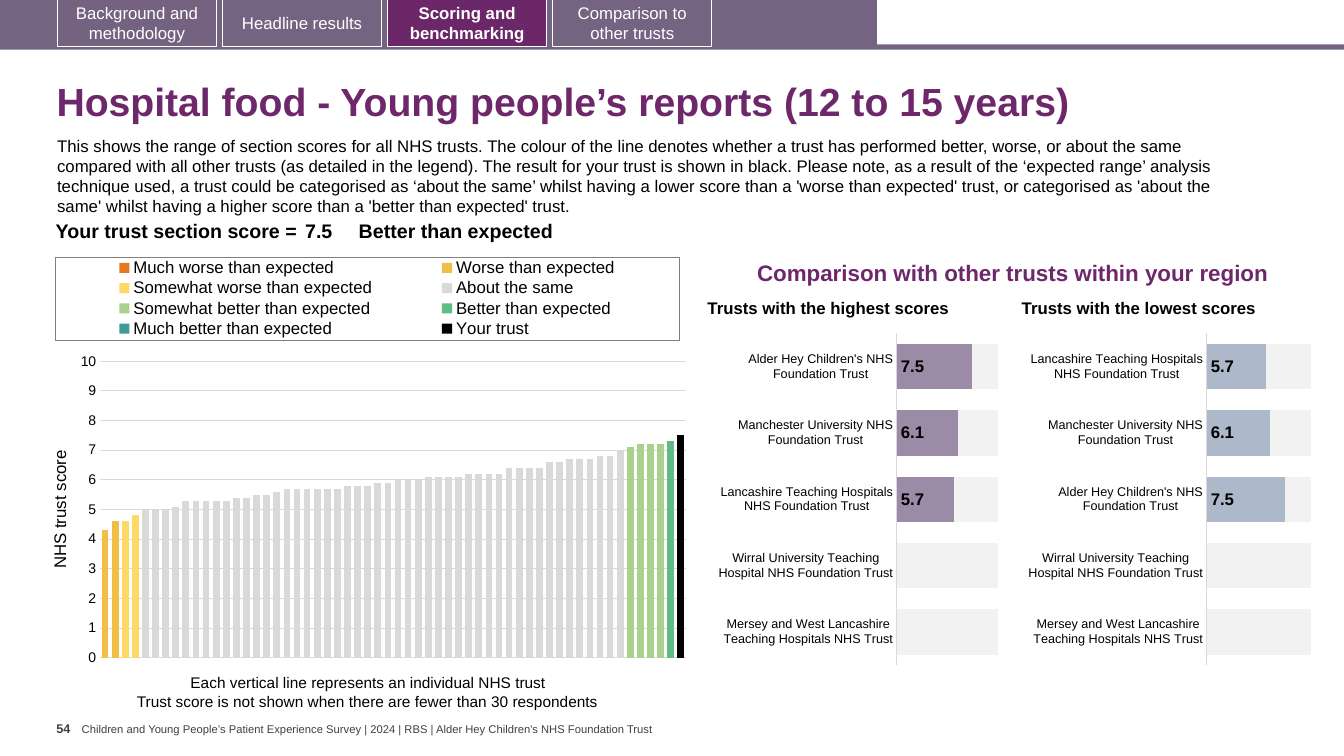
import copy
from dataclasses import dataclass

import pptx
import pptx.chart.data
import pptx.dml.color
import pptx.enum.chart
import pptx.enum.shapes
import pptx.enum.text
import pptx.oxml
import pptx.util

Cm, Pt = pptx.util.Cm, pptx.util.Pt
ALIGN, ANCHOR = pptx.enum.text.PP_ALIGN, pptx.enum.text.MSO_ANCHOR
XL = pptx.enum.chart


@dataclass(frozen=True)
class Theme:
    font: str = "Arial"
    black: str = "000000"
    white: str = "FFFFFF"
    grey: str = "404040"
    grid: str = "D9D9D9"
    frame: str = "7F7F7F"
    rest: str = "F2F2F2"
    band: str = "756382"
    tab: str = "746280"
    active: str = "6B2768"
    heading: str = "6D276A"
    highest: str = "9C8BA7"
    lowest: str = "ADB9CA"
    title: float = 28
    subtitle: float = 16
    score: float = 14
    body: float = 12
    note: float = 11
    axis: float = 10
    small: float = 9
    footer: float = 8


T = Theme()

# Section name, colour, position of its first trust, scores from there on
BANDS = [
    ("Much worse than expected", "E87722", 0, []),
    ("Worse than expected", "F1BE48", 0, [4.3, 4.6]),
    ("Somewhat worse than expected", "FFD966", 2, [4.6, 4.8]),
    ("About the same", "D9D9D9", 4,
     [5, 5, 5, 5.1] + [5.3] * 5 + [5.4, 5.4, 5.5, 5.5, 5.6] + [5.7] * 6 + [5.8] * 3
     + [5.9, 5.9, 6, 6, 6] + [6.1] * 4 + [6.2] * 4 + [6.4] * 4
     + [6.6, 6.6, 6.7, 6.7, 6.7, 6.8, 6.8, 7]),
    ("Somewhat better than expected", "A9D18E", 52, [7.1, 7.2, 7.2, 7.2]),
    ("Better than expected", "5FBD83", 56, [7.3, 7.5]),
    ("Much better than expected", "419999", 0, []),
    ("Your trust", "000000", 57, [7.5]),
]
TRUST_COUNT = 58
SCORED = [("Alder Hey Children's NHS Foundation Trust", 7.5),
          ("Manchester University NHS Foundation Trust", 6.1),
          ("Lancashire Teaching Hospitals NHS Foundation Trust", 5.7)]
UNSCORED = [("Wirral University Teaching Hospital NHS Foundation Trust", None),
            ("Mersey and West Lancashire Teaching Hospitals NHS Trust", None)]


def rgb(color):
    return pptx.dml.color.RGBColor.from_string(color)


def style(font, size, color=T.black, bold=False):
    font.name, font.size, font.bold = T.font, Pt(size), bold
    font.color.rgb = rgb(color)


def write(tf, text, size=T.body, color=T.black, bold=False, align=ALIGN.LEFT,
          anchor=ANCHOR.TOP, spacing=None, inset=None, wrap=True):
    tf.word_wrap, tf.vertical_anchor = wrap, anchor
    if inset is not None:
        tf.margin_left = tf.margin_right = tf.margin_top = tf.margin_bottom = Cm(inset)
    p = tf.paragraphs[0]
    p.alignment, p.line_spacing = align, spacing
    r = p.add_run()
    r.text = text
    style(r.font, size, color, bold)


def add_text(s, x, y, w, h, text, **fmt):
    write(s.shapes.add_textbox(Cm(x), Cm(y), Cm(w), Cm(h)).text_frame, text, **fmt)


def add_rect(s, x, y, w, h, fill=None, line=None):
    sp = s.shapes.add_shape(pptx.enum.shapes.MSO_SHAPE.RECTANGLE, Cm(x), Cm(y), Cm(w), Cm(h))
    sp.shadow.inherit = False
    if fill:
        sp.fill.solid()
        sp.fill.fore_color.rgb = rgb(fill)
    else:
        sp.fill.background()
    if line:
        sp.line.color.rgb, sp.line.width = rgb(line), Pt(0.75)
    else:
        sp.line.fill.background()
    return sp


def place(element, x, y, w, h, inner=False):
    """Give a plot area or legend a fixed place, in fractions of its chart."""
    for old in element.xpath("c:layout"):
        element.remove(old)
    parts = {"xMode": "edge", "yMode": "edge", "x": x, "y": y, "w": w, "h": h}
    if inner:
        parts = {"layoutTarget": "inner", **parts}
    body = "".join(f'<c:{tag} val="{val}"/>' for tag, val in parts.items())
    layout = pptx.oxml.parse_xml(
        '<c:layout xmlns:c="http://schemas.openxmlformats.org/drawingml/2006/chart">'
        f"<c:manualLayout>{body}</c:manualLayout></c:layout>")
    if inner:
        element.insert(0, layout)
    else:
        element.xpath("c:legendPos")[0].addnext(layout)


def last_series_on_right_axis(chart):
    """Move the last series to a second bar group with its own axes."""
    bars = chart.plots[0]._element
    right = copy.deepcopy(bars)
    bars.remove(bars.xpath("c:ser")[-1])
    for ser in right.xpath("c:ser")[:-1]:
        right.remove(ser)
    bars.addnext(right)
    cat, val = (copy.deepcopy(axis._element) for axis in (chart.category_axis, chart.value_axis))
    for old in val.xpath("c:majorGridlines | c:title"):
        val.remove(old)
    chart.value_axis._element.addnext(val)
    val.addnext(cat)
    ids = {cat.xpath("c:axId")[0].get("val"): "5001", val.xpath("c:axId")[0].get("val"): "5002"}
    for part in (right, cat, val):
        for ref in part.xpath("c:axId | c:crossAx"):
            ref.set("val", ids[ref.get("val")])
    for tag, setting in (("axPos", "r"), ("tickLblPos", "none"), ("crosses", "max")):
        val.xpath(f"c:{tag}")[0].set("val", setting)


def add_chart(s, x, y, w, h, kind, cats, series, gap):
    """Add a chart of (name, colour, values) series with overlapping bars."""
    data = pptx.chart.data.CategoryChartData(number_format="0.0")
    data.categories = cats
    for name, _, vals in series:
        data.add_series(name, vals)
    chart = s.shapes.add_chart(kind, Cm(x), Cm(y), Cm(w), Cm(h), data).chart
    chart.has_title = chart.has_legend = False
    style(chart.font, T.axis)
    plot = chart.plots[0]
    plot.gap_width, plot.overlap, plot.vary_by_categories = gap, 100, False
    for ser, (_, color, _) in zip(plot.series, series):
        ser.format.fill.solid()
        ser.format.fill.fore_color.rgb = rgb(color)
        ser.invert_if_negative = False
    axis = chart.value_axis
    axis.minimum_scale, axis.maximum_scale = 0, 10
    axis.major_tick_mark = chart.category_axis.major_tick_mark = XL.XL_TICK_MARK.NONE
    return chart


def navigation(s, x, y, w, h):
    add_rect(s, x, y + h - 0.07, w, 0.13, T.band)
    add_rect(s, x, y, 22.1, h, T.band)
    tabs = [("Background and methodology", T.tab), ("Headline results", None),
            ("Scoring and benchmarking", T.active), ("Comparison to other trusts", T.band)]
    for i, (label, fill) in enumerate(tabs):
        sp = add_rect(s, x + 1.45 + 4.16 * i, y - 0.02, 4.01, h, fill, T.white)
        write(sp.text_frame, label, color=T.white, bold=fill == T.active,
              align=ALIGN.CENTER, anchor=ANCHOR.MIDDLE)


def introduction(s, x, y, w, h):
    title = s.shapes.title
    title.left, title.top, title.width, title.height = Cm(x), Cm(y), Cm(w), Cm(1.83)
    write(title.text_frame, "Hospital food - Young people’s reports (12 to 15 years)",
          size=T.title, color=T.heading, bold=True, anchor=ANCHOR.MIDDLE, spacing=0.9)
    add_text(s, x + 0.02, y + 1.59, 30.81, h - 1.59,
             "This shows the range of section scores for all NHS trusts. The colour of the line "
             "denotes whether a trust has performed better, worse, or about the same compared with "
             "all other trusts (as detailed in the legend). The result for your trust is shown in "
             "black. Please note, as a result of the ‘expected range’ analysis technique used, a "
             "trust could be categorised as ‘about the same’ whilst having a lower score than a "
             "'worse than expected' trust, or categorised as 'about the same' whilst having a "
             "higher score than a 'better than expected' trust.")


def section_score(s, x, y, w, h):
    table = s.shapes.add_table(1, 3, Cm(x), Cm(y), Cm(w), Cm(h)).table
    table.first_row = table.horz_banding = False
    cells = [("Your trust section score =", 6.68, ALIGN.RIGHT, 0.1),
             ("7.5", 1.45, ALIGN.LEFT, 0.1),
             ("Better than expected", w - 8.13, ALIGN.LEFT, 0)]
    for i, (text, width, align, side) in enumerate(cells):
        table.columns[i].width = Cm(width)
        cell = table.cell(0, i)
        cell.fill.background()
        cell.margin_left = cell.margin_right = Cm(side)
        cell.margin_top = cell.margin_bottom = Cm(0.1)
        write(cell.text_frame, text, size=T.score, bold=True, align=align)


def trust_scores(s, x, y, w, h):
    series = [(name, color, [None] * start + vals + [None] * (TRUST_COUNT - start - len(vals)))
              for name, color, start, vals in BANDS]
    chart = add_chart(s, x, y, w, h, XL.XL_CHART_TYPE.COLUMN_CLUSTERED,
                      [str(n + 1) for n in range(TRUST_COUNT)], series, 50)
    place(chart.plots[0]._element.getparent(), 0.083, 0.267, 0.907, 0.699, inner=True)
    chart.category_axis.visible = False
    axis = chart.value_axis
    axis.major_unit = 1
    axis.tick_labels.number_format, axis.tick_labels.number_format_is_linked = "0", False
    style(axis.tick_labels.font, T.axis)
    axis.format.line.fill.background()
    grid = axis.major_gridlines.format.line
    grid.color.rgb, grid.width = rgb(T.grid), Pt(0.75)
    write(axis.axis_title.text_frame, "NHS trust score", align=ALIGN.CENTER)
    last_series_on_right_axis(chart)
    # Legend and its frame
    chart.has_legend = True
    chart.legend.position, chart.legend.include_in_layout = XL.XL_LEGEND_POSITION.TOP, False
    style(chart.legend.font, T.body)
    place(chart.legend._element, 0.014, 0.02, 0.965, 0.197)
    add_rect(s, x + 0.23, y + 0.23, 15.73, 2.1, line=T.frame)
    # Notes
    add_text(s, x + 3.38, y + h - 0.1, 9.53, 0.74, size=T.note, wrap=False,
             text="Each vertical line represents an individual NHS trust")
    add_text(s, x + 2.03, y + h + 0.38, 12.22, 0.74, size=T.note, wrap=False,
             text="Trust score is not shown when there are fewer than 30 respondents")


def ranking(s, x, y, w, h, heading, color, trusts, chart_inset, axis_at):
    add_text(s, x, y, w, 0.58, heading, bold=True, anchor=ANCHOR.BOTTOM, spacing=0.9, inset=0)
    series = [("Series 1", color, [score for _, score in trusts]),
              ("Series 2", T.rest, [round(10 - (score or 0), 1) for _, score in trusts])]
    chart = add_chart(s, x + chart_inset, y + 0.79, w, h - 0.79, XL.XL_CHART_TYPE.BAR_STACKED,
                      [name for name, _ in trusts], series, 47)
    place(chart.plots[0]._element.getparent(), axis_at, 0.02, 0.98 - axis_at, 0.96, inner=True)
    chart.value_axis.visible = chart.value_axis.has_major_gridlines = False
    axis = chart.category_axis
    axis.reverse_order = True
    style(axis.tick_labels.font, T.small)
    axis.format.line.color.rgb, axis.format.line.width = rgb(T.grid), Pt(0.75)
    labels = chart.plots[0].series[0].data_labels
    labels.show_value, labels.position = True, XL.XL_LABEL_POSITION.INSIDE_BASE
    labels.number_format, labels.number_format_is_linked = "0.0", False
    style(labels.font, T.body, bold=True)


def region_comparison(s, x, y, w, h):
    add_text(s, x + 1.25, y, 13.89, 1.3, "Comparison with other trusts within your region",
             size=T.subtitle, color=T.heading, bold=True, anchor=ANCHOR.BOTTOM,
             spacing=0.9, inset=0)
    ranking(s, x, y + 1.52, 7.26, h - 1.52, "Trusts with the highest scores",
            T.highest, SCORED + UNSCORED, 0.2, 0.63)
    ranking(s, x + 7.92, y + 1.52, 7.28, h - 1.52, "Trusts with the lowest scores",
            T.lowest, SCORED[::-1] + UNSCORED, 0.15, 0.62)


def footer(s, x, y, w, h):
    add_text(s, x, y, 0.64, h, "54", size=T.small, color=T.grey, bold=True,
             anchor=ANCHOR.MIDDLE, inset=0, wrap=False)
    add_text(s, x + 0.64, y, w - 0.64, h, "Children and Young People’s Patient Experience Survey "
             "| 2024 | RBS | Alder Hey Children's NHS Foundation Trust", size=T.footer,
             color=T.grey, anchor=ANCHOR.MIDDLE, inset=0, wrap=False)


def main():
    prs = pptx.Presentation()
    prs.slide_width, prs.slide_height = Cm(33.87), Cm(19.05)
    s = prs.slides.add_slide(prs.slide_layouts[5])
    navigation(s, 0, 0, 33.87, 1.19)
    introduction(s, 1.17, 1.7, 31.72, 3.89)
    section_score(s, 0.91, 5.46, 29.69, 0.79)
    trust_scores(s, 1.17, 6.25, 16.28, 10.69)
    region_comparison(s, 17.83, 5.92, 15.27, 11.02)
    footer(s, 1.42, 18.2, 15.27, 0.33)
    prs.save("out.pptx")


if __name__ == "__main__":
    main()
